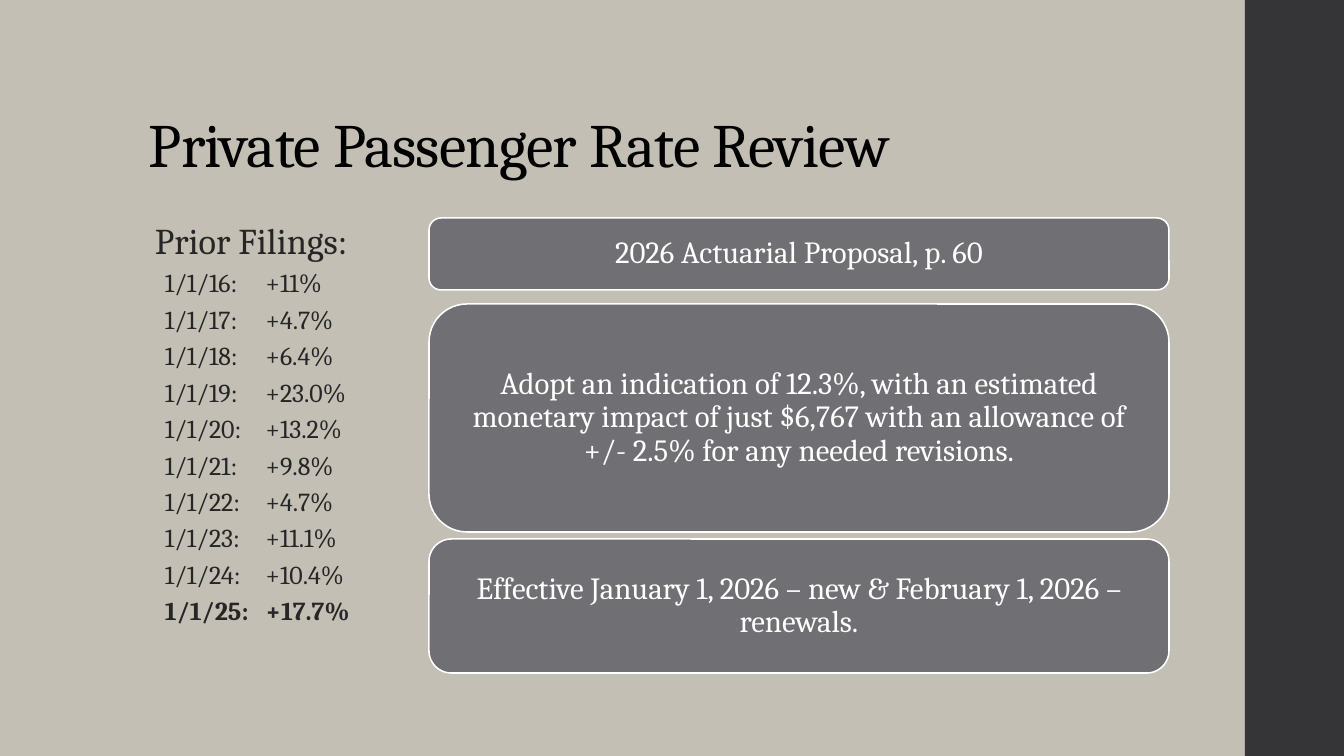
from lxml import etree
from pptx import Presentation
from pptx import util as u
from pptx.dml.color import RGBColor
from pptx.enum import shapes, text
from pptx.oxml.ns import qn

COLORS = {"back": "C3BFB5", "band": "353537", "title": "000000",
          "body": "262626", "card": "6F6F74", "white": "FFFFFF"}
FONT = "Cambria"
TITLE = "Private Passenger Rate Review"
HEADING = "Prior Filings:"
# date, rate change, tab position in px from the text's indent
FILINGS = [
    ("1/1/16:", "+11%", 102), ("1/1/17:", "+4.7%", 102), ("1/1/18:", "+6.4%", 102),
    ("1/1/19:", "+23.0%", 113), ("1/1/20:", "+13.2%", 111), ("1/1/21:", "+9.8%", 119),
    ("1/1/22:", "+4.7%", 121), ("1/1/23:", "+11.1%", 110), ("1/1/24:", "+10.4%", 111),
    ("1/1/25:", "+17.7%", 119),
]
# top, height, wording
CARDS = [
    (218, 72, "2026 Actuarial Proposal, p. 60"),
    (304, 228, "Adopt an indication of 12.3%, with an estimated monetary impact of just "
               "$6,767 with an allowance of +/- 2.5% for any needed revisions."),
    (539, 134, "Effective January 1, 2026 – new & February 1, 2026 – renewals."),
]
CARD_LEFT, CARD_WIDTH, CARD_MARGIN = 429, 740, 9
HEADING_INDENT, FILING_INDENT = 50, 60


def px(n):
    return u.Emu(round(n * 914400 / 100.8))


def rgb(name):
    return RGBColor.from_string(COLORS[name])


def add_box(s, kind, left, top, width, height, fill):
    sp = s.shapes.add_shape(kind, px(left), px(top), px(width), px(height))
    sp.shadow.inherit = False
    sp.fill.solid()
    sp.fill.fore_color.rgb = rgb(fill)
    sp.line.fill.background()
    return sp


def add_text_box(s, left, top, width, height):
    tf = s.shapes.add_textbox(px(left), px(top), px(width), px(height)).text_frame
    tf.word_wrap = True
    return tf


def add_run(p, wording, size, color, bold=False):
    p.line_spacing = 0.9
    r = p.add_run()
    r.text = wording
    r.font.name = FONT
    r.font.size = u.Pt(size)
    r.font.bold = bold
    r.font.color.rgb = rgb(color)
    return r


def format_list_item(p, indent, tab=None):
    """Space and indent a paragraph, with one left tab stop if given."""
    p.space_before = p.space_after = u.Pt(3)
    pPr = p._p.get_or_add_pPr()
    pPr.set("marL", str(px(indent)))
    pPr.set("indent", "0")
    if tab:
        tabs = etree.SubElement(pPr, qn("a:tabLst"))
        etree.SubElement(tabs, qn("a:tab"), pos=str(px(tab)), algn="l")


def main():
    prs = Presentation()
    prs.slide_width, prs.slide_height = px(1344), px(756)
    s = prs.slides.add_slide(prs.slide_layouts[6])
    s.background.fill.solid()
    s.background.fill.fore_color.rgb = rgb("back")
    add_box(s, shapes.MSO_SHAPE.RECTANGLE, 1245, 0, 99, 756, "band")

    tf = add_text_box(s, 139, 40, 1068, 146)
    tf.vertical_anchor = text.MSO_ANCHOR.BOTTOM
    r = add_run(tf.paragraphs[0], TITLE, 44, "title")
    r._r.get_or_add_rPr().set("spc", "-50")

    tf = add_text_box(s, 95, 218, 306, 464)
    p = tf.paragraphs[0]
    add_run(p, HEADING, 25.9, "body")
    format_list_item(p, HEADING_INDENT)
    for date, change, tab in FILINGS:
        p = tf.add_paragraph()
        latest = date == FILINGS[-1][0]
        add_run(p, f"{date}\t{change}", 18.5, "body", latest)
        format_list_item(p, FILING_INDENT, tab)

    for top, height, wording in CARDS:
        sp = add_box(s, shapes.MSO_SHAPE.ROUNDED_RECTANGLE,
                     CARD_LEFT, top, CARD_WIDTH, height, "card")
        sp.line.color.rgb = rgb("white")
        sp.line.width = u.Pt(1.1)
        tf = sp.text_frame
        tf.word_wrap = True
        tf.vertical_anchor = text.MSO_ANCHOR.MIDDLE
        tf.margin_left = tf.margin_right = tf.margin_top = tf.margin_bottom = px(CARD_MARGIN)
        p = tf.paragraphs[0]
        p.alignment = text.PP_ALIGN.CENTER
        add_run(p, wording, 22, "white")

    prs.save("out.pptx")


if __name__ == "__main__":
    main()
